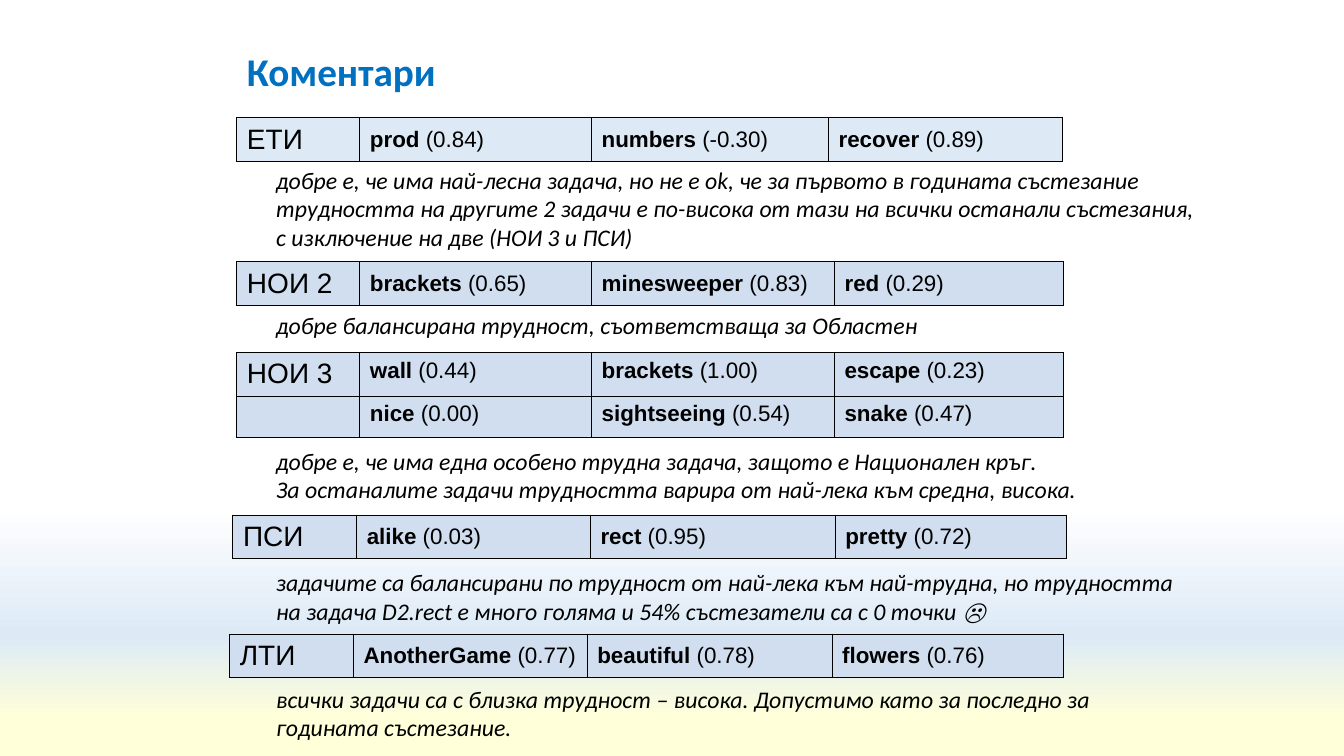
from dataclasses import dataclass

from lxml.etree import SubElement
from pptx import Presentation
from pptx.dml.color import RGBColor
from pptx.enum.text import MSO_VERTICAL_ANCHOR as Anchor
from pptx.oxml.ns import qn
from pptx.slide import Slide
from pptx.table import _Cell as Cell
from pptx.text.text import _Run as Run
from pptx.util import Cm, Pt

COLORS = {
    "white": "FFFFFF",
    "sky": "DDEAF6",
    "cream": "FFFFD9",
    "blue": "D0DEEF",
    "title": "0070C0",
    "black": "000000",
}
BACKGROUND_STOPS = [(0, "white"), (67, "white"), (84, "sky"), (95, "cream"), (100, "cream")]
NATIONAL_WIDTHS = (3.1, 5.84, 6.12, 5.77)
SUMMER_WIDTHS = (3.12, 5.89, 6.17, 5.82)
ROW_HEIGHTS = (1.1, 1.03)
COMMENT_LEFT = 6.71


@dataclass(frozen=True)
class Task:
    name: str
    difficulty: str


@dataclass(frozen=True)
class Contest:
    name: str
    left: float
    top: float
    widths: tuple[float, ...]
    rows: list[list[Task]]
    fill: str = "blue"


@dataclass(frozen=True)
class Comment:
    top: float
    height: float
    lines: tuple[str, ...]
    width: float = 23.68


CONTESTS = [
    Contest("ETИ", 5.97, 2.97, (3.1, 5.84, 5.97, 5.9),
            [[Task("prod", "0.84"), Task("numbers", "-0.30"), Task("recover", "0.89")]], "sky"),
    Contest("НОИ 2", 5.97, 6.6, NATIONAL_WIDTHS,
            [[Task("brackets", "0.65"), Task("minesweeper", "0.83"), Task("red", "0.29")]]),
    Contest("НОИ 3", 5.97, 8.89, NATIONAL_WIDTHS,
            [[Task("wall", "0.44"), Task("brackets", "1.00"), Task("escape", "0.23")],
             [Task("nice", "0.00"), Task("sightseeing", "0.54"), Task("snake", "0.47")]]),
    Contest("ПСИ", 5.87, 12.98, SUMMER_WIDTHS,
            [[Task("alike", "0.03"), Task("rect", "0.95"), Task("pretty", "0.72")]]),
    Contest("ЛТИ", 5.79, 15.98, SUMMER_WIDTHS,
            [[Task("AnotherGame", "0.77"), Task("beautiful", "0.78"), Task("flowers", "0.76")]]),
]
COMMENTS = [
    Comment(4.04, 2.45, (
        "добре е, че има най-лесна задача, но не е ok, че за първото в годината състезание "
        "трудността на другите 2 задачи е по-висока от тази на всички останали състезания, "
        "с изключение на две (НОИ 3 и ПСИ)",)),
    Comment(7.7, 1, ("добре балансирана трудност, съответстваща за Областен",)),
    Comment(11.12, 1.72, (
        "добре е, че има една особено трудна задача, защото е Национален кръг.",
        "За останалите задачи трудността варира от най-лека към средна, висока.")),
    Comment(14.18, 1.72, (
        "задачите са балансирани по трудност от най-лека към най-трудна, но трудността "
        "на задача D2.rect е много голяма и 54% състезатели са с 0 точки ☹",)),
    Comment(17.12, 1.72, (
        "всички задачи са с близка трудност – висока. Допустимо като за последно за "
        "годината състезание.",), 22.5),
]


def rgb(color: str) -> RGBColor:
    return RGBColor.from_string(COLORS[color])


def style_run(run: Run, font: str, size: float, color: str = "black",
              bold: bool = False, italic: bool = False) -> None:
    run.font.name = font
    run.font.size = Pt(size)
    run.font.bold = bold
    run.font.italic = italic
    run.font.color.rgb = rgb(color)


def paint_background(slide: Slide) -> None:
    fill = slide.background.fill
    fill.gradient()
    fill.gradient_angle = 270
    stop_list = next(slide.element.iter(qn("a:gsLst")))
    for stop in list(stop_list):
        stop_list.remove(stop)
    for percent, color in BACKGROUND_STOPS:
        stop = SubElement(stop_list, qn("a:gs"), pos=str(percent * 1000))
        SubElement(stop, qn("a:srgbClr"), val=COLORS[color])


def add_text(slide: Slide, left: float, top: float, width: float, height: float,
             lines: tuple[str, ...], size: float, color: str = "black",
             bold: bool = False, italic: bool = False) -> None:
    frame = slide.shapes.add_textbox(Cm(left), Cm(top), Cm(width), Cm(height)).text_frame
    frame.word_wrap = True
    frame.vertical_anchor = Anchor.MIDDLE if bold else Anchor.TOP
    frame.text = "\n".join(lines)
    for paragraph in frame.paragraphs:
        for run in paragraph.runs:
            style_run(run, "Calibri", size, color, bold, italic)


def style_cell(cell: Cell, fill: str, anchor: Anchor) -> None:
    properties = cell._tc.get_or_add_tcPr()
    for side in ("L", "R", "T", "B"):
        line = SubElement(properties, qn(f"a:ln{side}"), w=str(Pt(0.75)))
        SubElement(SubElement(line, qn("a:solidFill")), qn("a:srgbClr"), val=COLORS["black"])
    cell.fill.solid()
    cell.fill.fore_color.rgb = rgb(fill)
    cell.vertical_anchor = anchor


def add_contest(slide: Slide, contest: Contest) -> None:
    row_count = len(contest.rows)
    heights = ROW_HEIGHTS[:row_count]
    table = slide.shapes.add_table(
        row_count, len(contest.widths), Cm(contest.left), Cm(contest.top),
        Cm(sum(contest.widths)), Cm(sum(heights))).table
    table.first_row = False
    table.horz_banding = False
    for column, width in zip(table.columns, contest.widths):
        column.width = Cm(width)
    for row, height in zip(table.rows, heights):
        row.height = Cm(height)
    anchor = Anchor.MIDDLE if row_count == 1 else Anchor.TOP
    for cell in table.iter_cells():
        style_cell(cell, contest.fill, anchor)

    name_cell = table.cell(0, 0)
    name_cell.text_frame.text = contest.name
    style_run(name_cell.text_frame.paragraphs[0].runs[0], "Arial", 20)
    for row_index, tasks in enumerate(contest.rows):
        for column_index, task in enumerate(tasks, start=1):
            paragraph = table.cell(row_index, column_index).text_frame.paragraphs[0]
            for text, bold in ((task.name, True), (f" ({task.difficulty})", False)):
                run = paragraph.add_run()
                run.text = text
                style_run(run, "Arial", 16, bold=bold)


def main() -> None:
    presentation = Presentation()
    presentation.slide_width = Cm(33.87)
    presentation.slide_height = Cm(19.05)
    slide = presentation.slides.add_slide(presentation.slide_layouts[6])
    paint_background(slide)
    add_text(slide, 5.97, 1.02, 21.89, 1.52, ("Коментари",), 28, "title", bold=True)
    for comment in COMMENTS:
        add_text(slide, COMMENT_LEFT, comment.top, comment.width, comment.height,
                 comment.lines, 17, italic=True)
    for contest in CONTESTS:
        add_contest(slide, contest)
    presentation.save("out.pptx")


if __name__ == "__main__":
    main()
